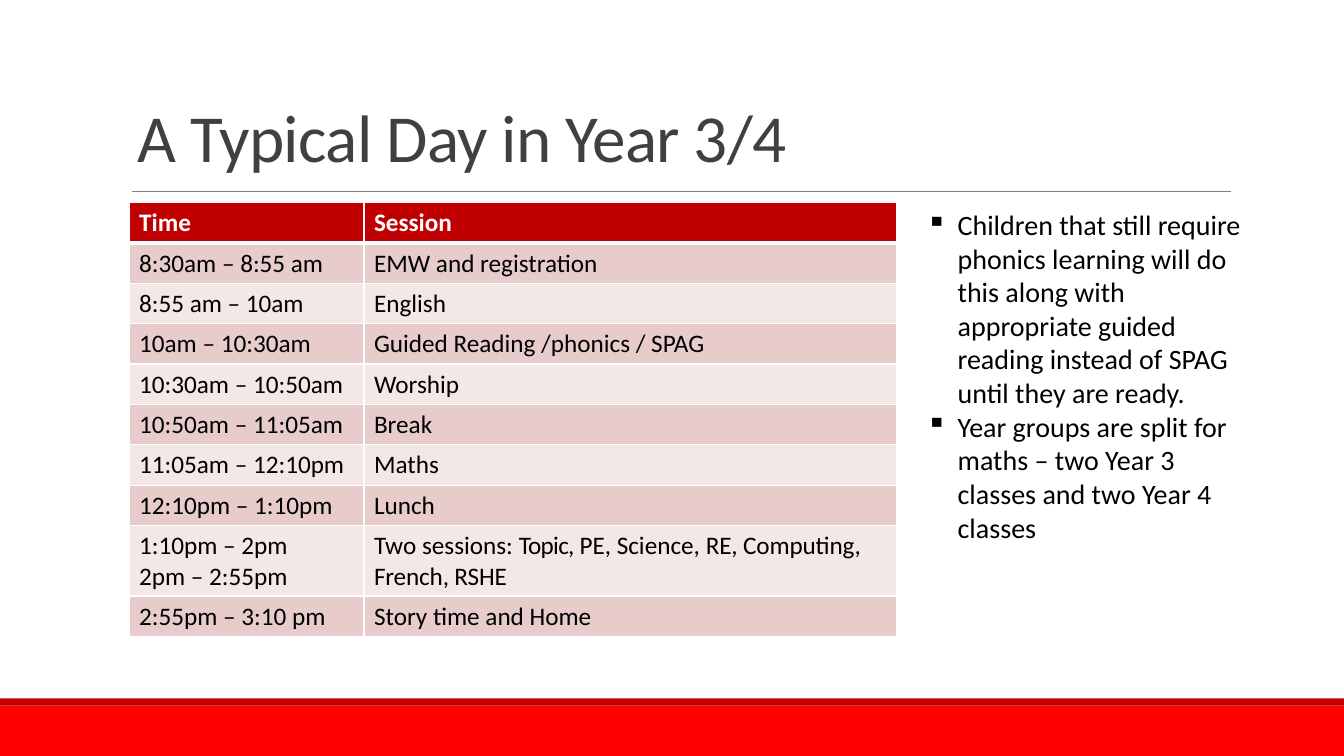
from lxml import etree
from pptx import Presentation
from pptx.dml.color import RGBColor
from pptx.enum.shapes import MSO_CONNECTOR, MSO_SHAPE
from pptx.enum.text import MSO_ANCHOR, MSO_AUTO_SIZE
from pptx.oxml.ns import qn
from pptx.util import Inches, Pt

RECTANGLE = MSO_SHAPE.RECTANGLE
STRAIGHT = MSO_CONNECTOR.STRAIGHT
BOTTOM = MSO_ANCHOR.BOTTOM
GROW = MSO_AUTO_SIZE.SHAPE_TO_FIT_TEXT

THEME = {
    "font": "Calibri",
    "title_size": 48, "table_size": 18, "note_size": 20,
    "title": "404040", "text": "000000", "white": "FFFFFF", "rule": "808080",
    "footer": "FF0000", "accent": "C00000",
    "bands": ("F4E7E7", "E8CCCC"),
}

TIMETABLE = [
    ("Time", "Session"),
    ("8:30am – 8:55 am", "EMW and registration"),
    ("8:55 am – 10am", "English"),
    ("10am – 10:30am", "Guided Reading /phonics / SPAG"),
    ("10:30am – 10:50am", "Worship"),
    ("10:50am – 11:05am", "Break"),
    ("11:05am – 12:10pm", "Maths"),
    ("12:10pm – 1:10pm", "Lunch"),
    ("1:10pm – 2pm\n2pm – 2:55pm",
     [("Two sessions: ", 0), ("Topic, ", -50), ("PE, Science, ", 0),
      ("RE, Computing, French, RSHE", -10)]),
    ("2:55pm – 3:10 pm", "Story time and Home"),
]

NOTES = [
    "Children that still require phonics learning will do this along with "
    "appropriate guided reading instead of SPAG until they are ready.",
    "Year groups are split for maths – two Year 3 classes and two Year 4 classes",
]


def style_text(paragraph, size, color, bold=False):
    font = paragraph.font
    font.name = THEME["font"]
    font.size = Pt(size)
    font.bold = bold
    font.color.rgb = RGBColor.from_string(color)


def add_border(cell, side, points):
    border = etree.SubElement(cell._tc.get_or_add_tcPr(), qn(f"a:ln{side}"), w=str(Pt(points)))
    fill = etree.SubElement(border, qn("a:solidFill"))
    etree.SubElement(fill, qn("a:srgbClr"), val=THEME["white"])


deck = Presentation()
deck.slide_width = Inches(13.33)
deck.slide_height = Inches(7.5)
page = deck.slides.add_slide(deck.slide_layouts[6])

for top, height, color in [(7, 0.5, THEME["footer"]), (6.93, 0.07, THEME["accent"])]:
    band = page.shapes.add_shape(RECTANGLE, 0, Inches(top), deck.slide_width, Inches(height))
    band.shadow.inherit = False
    band.fill.solid()
    band.fill.fore_color.rgb = RGBColor.from_string(color)
    band.line.fill.background()

rule = page.shapes.add_connector(STRAIGHT, Inches(1.31), Inches(1.9), Inches(12.21), Inches(1.9))
rule.line.color.rgb = RGBColor.from_string(THEME["rule"])
rule.line.width = Pt(0.5)
etree.SubElement(rule._element.spPr, qn("a:effectLst"))

title_box = page.shapes.add_textbox(Inches(1.27), Inches(0.36), Inches(9.4), Inches(1.44))
title_box.text_frame.word_wrap = True
title_box.text_frame.vertical_anchor = BOTTOM
title = title_box.text_frame.paragraphs[0]
title.line_spacing = 0.85
title_span = title.add_run()
title_span.text = "A Typical Day in Year 3/4"
title_span.font._element.set("spc", "-50")
style_text(title, THEME["title_size"], THEME["title"])

table = page.shapes.add_table(
    len(TIMETABLE), 2, Inches(1.28), Inches(2.01), Inches(7.61), Inches(4)
).table
table.columns[0].width = Inches(2.33)
table.columns[1].width = Inches(5.28)

for row, entries in enumerate(TIMETABLE):
    header = row == 0
    for column, entry in enumerate(entries):
        cell = table.cell(row, column)
        for side in "LRTB":
            heavy = (header and side == "B") or (row == 1 and side == "T")
            add_border(cell, side, 3 if heavy else 1)
        cell.fill.solid()
        cell.fill.fore_color.rgb = RGBColor.from_string(
            THEME["accent"] if header else THEME["bands"][row % 2])
        if isinstance(entry, str):
            cell.text = entry
        else:
            for words, spacing in entry:
                span = cell.text_frame.paragraphs[0].add_run()
                span.text = words
                span.font._element.set("spc", str(spacing))
        for paragraph in cell.text_frame.paragraphs:
            style_text(paragraph, THEME["table_size"],
                       THEME["white"] if header else THEME["text"], header)

notes_box = page.shapes.add_textbox(Inches(9.09), Inches(2.01), Inches(3.44), Inches(3.47))
notes_frame = notes_box.text_frame
notes_frame.word_wrap = True
notes_frame.auto_size = GROW
notes_frame.text = "\n".join(NOTES)
for paragraph in notes_frame.paragraphs:
    style_text(paragraph, THEME["note_size"], THEME["text"])
    properties = paragraph._p.get_or_add_pPr()
    properties.set("marL", str(Inches(0.31)))
    properties.set("indent", str(Inches(-0.31)))
    bullet = etree.Element(qn("a:buChar"), char="▪")
    properties.insert(0, bullet)

deck.save("out.pptx")
